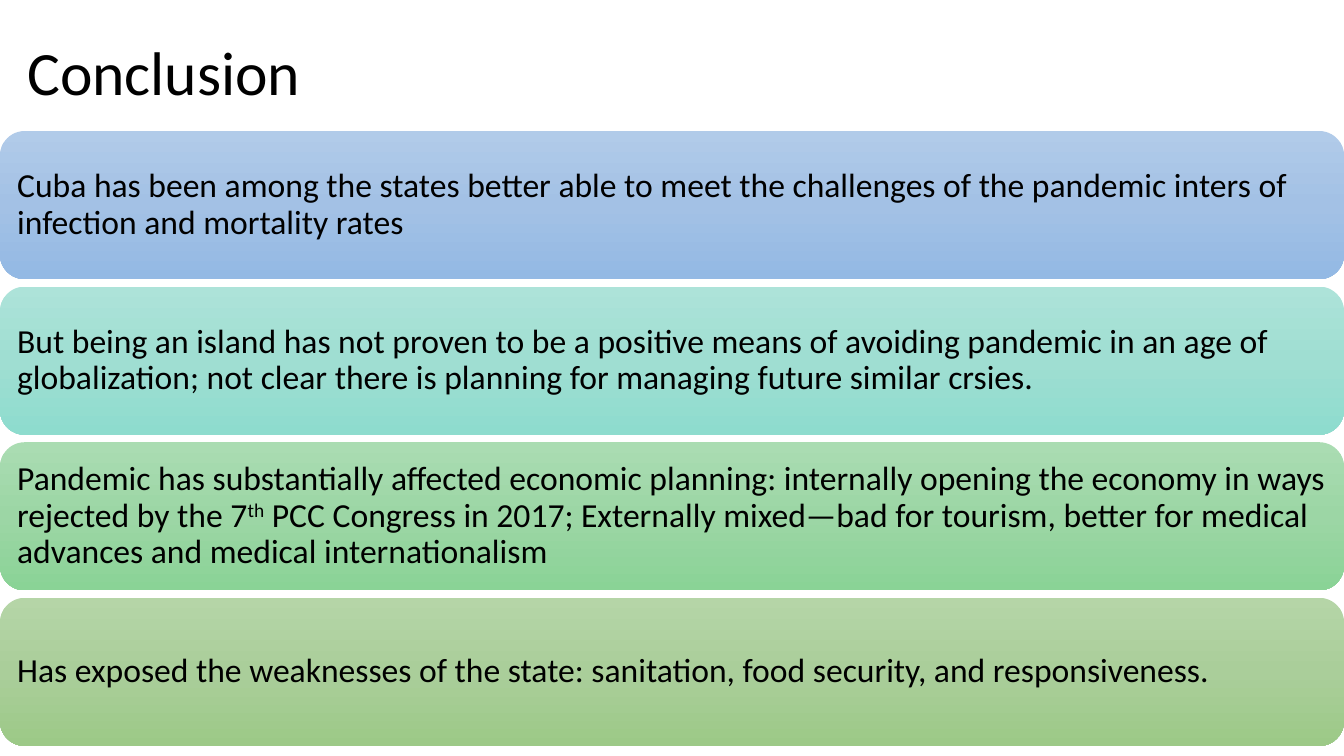
from copy import deepcopy
from dataclasses import dataclass

from pptx import Presentation
from pptx.dml.color import RGBColor
from pptx.enum.shapes import MSO_SHAPE
from pptx.enum.text import MSO_ANCHOR, PP_ALIGN
from pptx.util import Pt

ROUNDED = MSO_SHAPE.ROUNDED_RECTANGLE
MIDDLE = MSO_ANCHOR.MIDDLE
LEFT = PP_ALIGN.LEFT

FONT = "Calibri"
PAGE_WIDTH, PAGE_HEIGHT = 960, 540
BAND_TOP, BAND_HEIGHT, BAND_PITCH = 93.6, 105.8, 111.15
INSET = 7.2

COLOURS = {
    "text": "000000",
    "blue": ("B1CBE9", "A3C1E5", "93B9E4"),
    "teal": ("ADE3D9", "9FDED2", "8EDCCE"),
    "green": ("AADCB2", "9CD6A5", "8AD396"),
    "olive": ("B5D5A7", "AACE9A", "9CC987"),
}


@dataclass
class Band:
    colour: str
    before: str
    superscript: str = ""
    after: str = ""


BANDS = [
    Band("blue", "Cuba has been among the states better able to meet the challenges "
         "of the pandemic inters of infection and mortality rates"),
    Band("teal", "But being an island has not proven to be a positive means of avoiding "
         "pandemic in an age of globalization; not clear there is planning for managing "
         "future similar crsies."),
    Band("green", "Pandemic has substantially affected economic planning: internally opening "
         "the economy in ways rejected by the 7", "th",
         " PCC Congress in 2017; Externally mixed—bad for tourism, better for medical "
         "advances and medical internationalism"),
    Band("olive", "Has exposed the weaknesses of the state: sanitation, food security, "
         "and responsiveness."),
]


def format_paragraph(para, size: float) -> None:
    para.alignment = LEFT
    para.line_spacing = 0.9
    for span in para.runs:
        span.font.name = FONT
        span.font.size = Pt(size)
        span.font.color.rgb = RGBColor.from_string(COLOURS["text"])


def fill_gradient(shape, colours: tuple[str, str, str]) -> None:
    """Fill from top to bottom with three evenly spaced stops."""
    fill = shape.fill
    fill.gradient()
    fill.gradient_angle = 270
    stop_list = shape._element.spPr.gradFill.gsLst
    stop_list.insert(1, deepcopy(stop_list[0]))
    for index, (stop, colour) in enumerate(zip(fill.gradient_stops, colours)):
        stop.position = index / 2
        stop.color.rgb = RGBColor.from_string(colour)


def add_title(page, text: str) -> None:
    title = page.shapes.title
    title.left, title.top, title.width, title.height = Pt(12.24), Pt(1.5), Pt(828), Pt(104.4)
    frame = title.text_frame
    frame.text = text
    frame.vertical_anchor = MIDDLE
    format_paragraph(frame.paragraphs[0], 44)


def add_band(page, band: Band, top: float) -> None:
    box = page.shapes.add_shape(ROUNDED, 0, Pt(top), Pt(PAGE_WIDTH), Pt(BAND_HEIGHT))
    box.shadow.inherit = False
    box.line.fill.background()
    fill_gradient(box, COLOURS[band.colour])

    frame = box.text_frame
    frame.word_wrap = True
    frame.vertical_anchor = MIDDLE
    frame.margin_left = frame.margin_right = Pt(INSET)
    frame.margin_top = frame.margin_bottom = Pt(INSET)
    para = frame.paragraphs[0]
    para.text = band.before
    if band.superscript:
        raised = para.add_run()
        raised.text = band.superscript
        raised.font._element.set("baseline", "30000")
        para.add_run().text = band.after
    format_paragraph(para, 24)


def main() -> None:
    deck = Presentation()
    deck.slide_width, deck.slide_height = Pt(PAGE_WIDTH), Pt(PAGE_HEIGHT)
    page = deck.slides.add_slide(deck.slide_layouts[5])

    # Heading
    add_title(page, "Conclusion")

    # Stacked conclusions
    for index, band in enumerate(BANDS):
        add_band(page, band, BAND_TOP + index * BAND_PITCH)

    deck.save("out.pptx")


if __name__ == "__main__":
    main()
